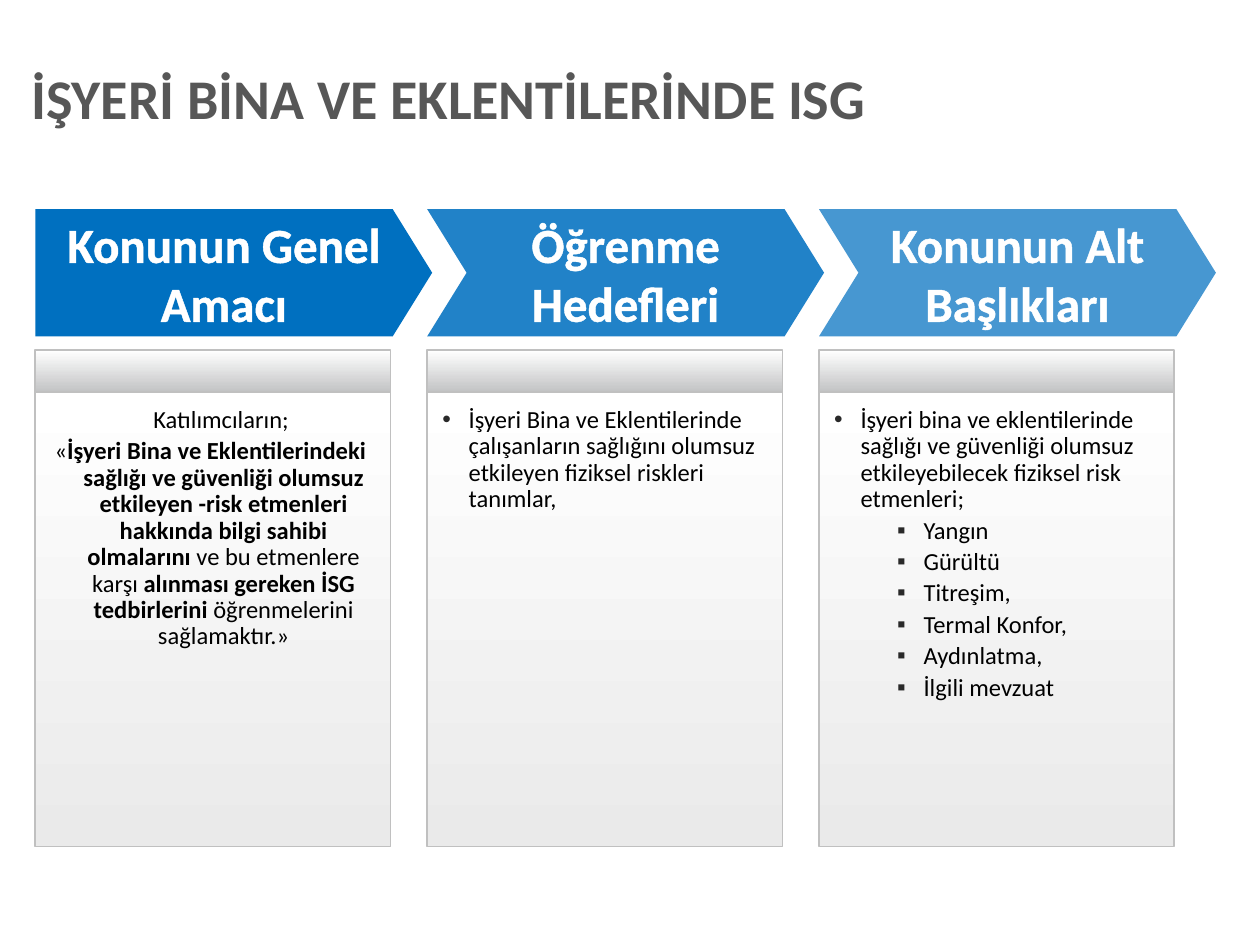
"""Build a slide with three arrow headings over three text columns."""
from lxml.etree import SubElement as Sub
from pptx import Presentation
from pptx.dml.color import RGBColor
from pptx.enum.shapes import MSO_SHAPE as Kind
from pptx.enum.text import MSO_ANCHOR as Anchor, PP_ALIGN as Align
from pptx.oxml.ns import qn
from pptx.util import Inches, Pt

TITLE = "İŞYERİ BİNA VE EKLENTİLERİNDE ISG"
HEADS = [
    ("Konunun Genel Amacı", Kind.PENTAGON, 100),
    ("Öğrenme Hedefleri", Kind.CHEVRON, 87),
    ("Konunun Alt Başlıkları", Kind.CHEVRON, 72),
]
TOPICS = ["Yangın", "Gürültü", "Titreşim,", "Termal Konfor,", "Aydınlatma,", "İlgili mevzuat"]
BODIES = [
    [
        ("", 0.21, -0.04, [("Katılımcıların;", False)]),
        ("", 0.21, -0.21, [
            ("«", False),
            ("İşyeri Bina ve Eklentilerindeki sağlığı ve güvenliği olumsuz etkileyen "
             "-risk etmenleri hakkında bilgi sahibi olmalarını ", True),
            ("ve bu etmenlere karşı ", False),
            ("alınması gereken İSG tedbirlerini", True),
            (" öğrenmelerini sağlamaktır.»", False),
        ]),
    ],
    [("•", 0.21, -0.21, [("İşyeri Bina ve Eklentilerinde çalışanların sağlığını olumsuz "
                          "etkileyen fiziksel riskleri tanımlar,", False)])],
    [("•", 0.21, -0.21, [("İşyeri bina ve eklentilerinde sağlığı ve güvenliği olumsuz "
                          "etkileyebilecek fiziksel risk etmenleri;", False)])]
    + [("▪", 0.71, -0.21, [(topic, False)]) for topic in TOPICS],
]
LEFT, STEP = 0.28, 3.11
HEAD_W, BODY_W = 3.15, 2.82


def rgb(code):
    """Turn a hex string into a colour."""
    return RGBColor.from_string(code)


def style(run, size, code, bold):
    """Format one run."""
    font = run.font
    font.name, font.size, font.bold = "Calibri", Pt(size), bold
    font.color.rgb = rgb(code)


def inset(frame, left, top, right, base):
    """Set the margins of a text frame and wrap it."""
    frame.word_wrap = True
    frame.margin_left, frame.margin_top = Inches(left), Inches(top)
    frame.margin_right, frame.margin_bottom = Inches(right), Inches(base)


def add_box(slide, kind, *area):
    """Add a shape without a shadow."""
    box = slide.shapes.add_shape(kind, *map(Inches, area))
    box.shadow.inherit = False
    return box


def add_head(slide, left, text, kind, alpha):
    """Add an arrow heading."""
    box = add_box(slide, kind, left, 1.66, HEAD_W, 1.01)
    box.adjustments[0] = 0.31
    box.line.fill.background()
    box.fill.solid()
    box.fill.fore_color.rgb = rgb("0070C0")
    if alpha < 100:
        tint = box.fill._xPr.find(qn("a:solidFill"))[0]
        Sub(tint, qn("a:alpha"), val=str(alpha * 1000))
    frame = box.text_frame
    frame.text = text
    frame.word_wrap = True
    frame.vertical_anchor = Anchor.MIDDLE
    para = frame.paragraphs[0]
    para.alignment = Align.CENTER
    run = para.runs[0]
    style(run, 28, "FFFFFF", True)
    props = run._r.get_or_add_rPr()
    edge = Sub(props, qn("a:ln"), w=str(Pt(1)))
    Sub(Sub(edge, qn("a:solidFill")), qn("a:srgbClr"), val="FFFFFF")
    props.insert(0, edge)


def add_panel(slide, left, top, height, shade):
    """Add a rectangle fading downwards from white."""
    box = add_box(slide, Kind.RECTANGLE, left, top, BODY_W, height)
    box.fill.gradient()
    box.fill.gradient_angle = 270
    for stop, code in zip(box.fill.gradient_stops, ("FFFFFF", shade)):
        stop.color.rgb = rgb(code)
    box.line.color.rgb = rgb("C0C0C0")
    box.line.width = Pt(1)
    return box


def fill_body(frame, paras):
    """Write the paragraphs of one column."""
    inset(frame, 0.12, 0.12, 0.16, 0.08)
    frame.vertical_anchor = Anchor.TOP
    for i, (mark, left, first, runs) in enumerate(paras):
        para = frame.add_paragraph() if i else frame.paragraphs[0]
        props = para._p.get_or_add_pPr()
        props.set("marL", str(Inches(left)))
        props.set("indent", str(Inches(first)))
        if mark:
            Sub(Sub(props, qn("a:buClr")), qn("a:srgbClr"), val="292929")
            Sub(props, qn("a:buFont"), typeface="Arial")
            Sub(props, qn("a:buChar"), char=mark)
        para.alignment = Align.LEFT if mark else Align.CENTER
        para.line_spacing, para.space_after = 0.9, Pt(2.8)
        for text, bold in runs:
            run = para.add_run()
            run.text = text
            style(run, 14, "000000", bold)


def add_title(slide):
    """Fill and place the title."""
    title = slide.shapes.title
    title.left, title.top = Inches(0.25), Inches(0.45)
    title.width, title.height = Inches(9.64), Inches(0.71)
    frame = title.text_frame
    frame.text = TITLE
    inset(frame, 0, 0.05, 0, 0.05)
    frame.vertical_anchor = Anchor.MIDDLE
    para = frame.paragraphs[0]
    para.alignment, para.line_spacing = Align.LEFT, 0.9
    style(para.runs[0], 32, "575757", True)


def main():
    """Build the slide."""
    deck = Presentation()
    deck.slide_width, deck.slide_height = Inches(10), Inches(7.5)
    slide = deck.slides.add_slide(deck.slide_layouts[5])
    add_title(slide)
    for i, (head, body) in enumerate(zip(HEADS, BODIES)):
        left = LEFT + i * STEP
        add_head(slide, left, *head)
        add_panel(slide, left, 2.78, 0.34, "C1C2C3")
        fill_body(add_panel(slide, left, 3.11, 3.61, "EAEAEA").text_frame, body)
    deck.save("out.pptx")


if __name__ == "__main__":
    main()
